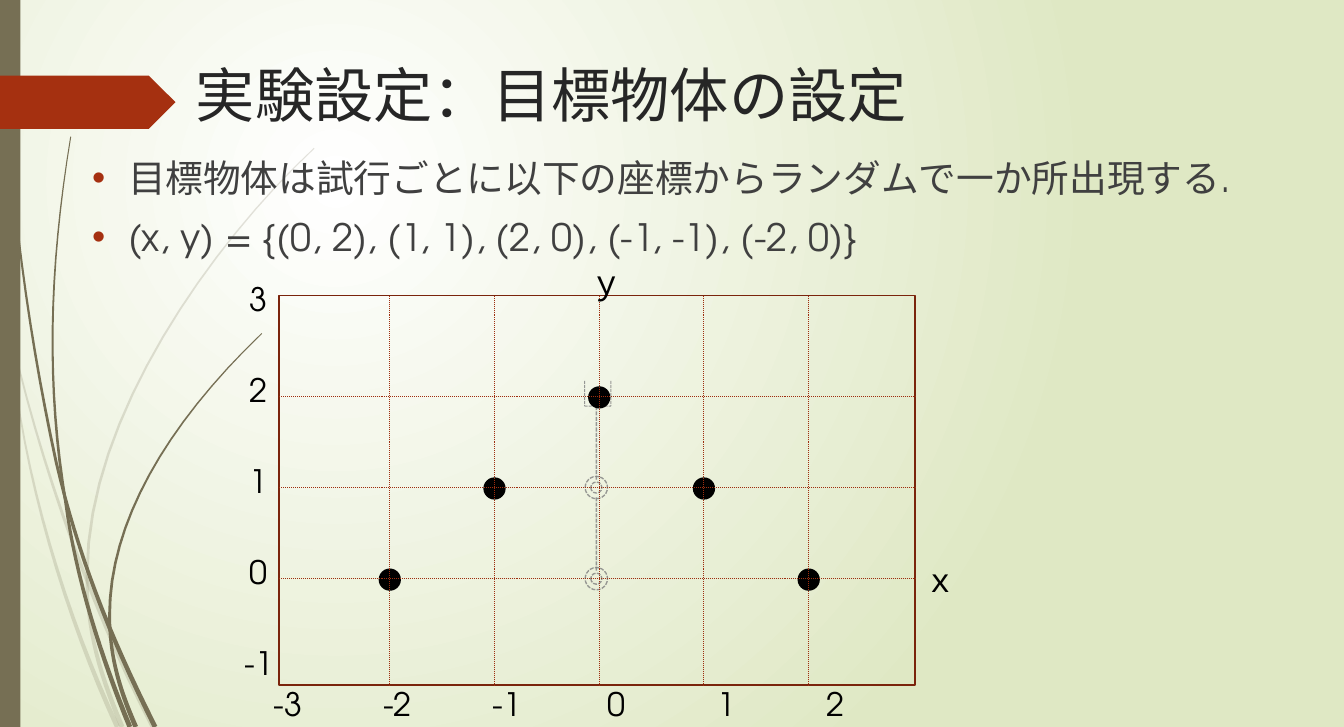
from dataclasses import dataclass
from math import hypot

from lxml import etree
from pptx import Presentation
from pptx.dml.color import RGBColor
from pptx.enum.dml import MSO_LINE
from pptx.enum.shapes import MSO_CONNECTOR, MSO_SHAPE
from pptx.enum.text import MSO_ANCHOR, PP_ALIGN
from pptx.oxml.ns import qn
from pptx.util import Inches, Pt

RECT, ELLIPSE = MSO_SHAPE.RECTANGLE, MSO_SHAPE.OVAL
DONUT, PENTAGON = MSO_SHAPE.DONUT, MSO_SHAPE.PENTAGON
STRAIGHT = MSO_CONNECTOR.STRAIGHT
DOTTED, DASHED = MSO_LINE.ROUND_DOT, MSO_LINE.SQUARE_DOT
LEFT, CENTER = PP_ALIGN.LEFT, PP_ALIGN.CENTER
TOP, MIDDLE = MSO_ANCHOR.TOP, MSO_ANCHOR.MIDDLE


@dataclass(frozen=True)
class Theme:
    font: str = "TeX Gyre Adventor"
    title_size: int = 44
    body_size: int = 28
    label_size: int = 24
    title: str = "262626"
    body: str = "404040"
    ink: str = "000000"
    accent: str = "A53010"
    frame: str = "7A240C"
    grid: str = "9E2E0F"
    ghost: str = "808080"
    wisp: str = "766F54"
    glow: str = "FFFFFF"
    backdrop: str = "DFE8C4"


# Centre line of each wisp: a start point, then cubic curves of three points.
PALE_WISPS = [
    [(0, 2.9), (.3, 4.5), (.9, 6.2), (1.58, 7.5)],
    [(.11, 3.5), (.22, 4.9), (.7, 6.4), (1.21, 7.5)],
    [(3.24, 1.53), (2.2, 2.5), (.9, 4.3), (.9, 5.9), (.88, 6.5), (1.05, 7), (1.26, 7.5)],
]
DARK_WISPS = [
    [(.04, 0), (.04, 1.6), (.26, 3.3), (.58, 4.77), (.8, 5.7), (1.1, 6.5), (1.6, 7.5)],
    [(.73, 1.41), (.5, 2.8), (.48, 4), (.68, 5.2), (.78, 5.95), (1.05, 6.8), (1.34, 7.5)],
    [(2.7, 3.44), (1.7, 4.4), (1.13, 5.4), (1.13, 6.35), (1.13, 6.8), (1.25, 7.15), (1.4, 7.5)],
]


def sample_curves(nodes, steps=16):
    """List points along a chain of cubic curves."""
    points = nodes[:1]
    for i in range(0, len(nodes) - 1, 3):
        for t in (step / steps for step in range(1, steps + 1)):
            weights = ((1 - t) ** 3, 3 * t * (1 - t) ** 2, 3 * t * t * (1 - t), t ** 3)
            points.append(tuple(sum(w * node[axis] for w, node in zip(weights, nodes[i:i + 4]))
                                for axis in (0, 1)))
    return points


def tapered_outline(points, thin=.01, thick=.05):
    """Give the centre line a width that grows from its start to its end."""
    one_side, other_side = [], []
    last = len(points) - 1
    for i, (x, y) in enumerate(points):
        (x1, y1), (x2, y2) = points[max(i - 1, 0)], points[min(i + 1, last)]
        half = (thin + (thick - thin) * i / last) / 2 / hypot(x2 - x1, y2 - y1)
        dx, dy = (y1 - y2) * half, (x2 - x1) * half
        one_side.append((Inches(x + dx), Inches(y + dy)))
        other_side.append((Inches(x - dx), Inches(y - dy)))
    return one_side + other_side[::-1]


def paint(fill, color, opacity=100):
    fill.solid()
    fill.fore_color.rgb = RGBColor.from_string(color)
    if opacity < 100:
        for rgb in list(fill._xPr.iter(qn("a:srgbClr"))):
            etree.SubElement(rgb, qn("a:alpha"), val=str(opacity * 1000))


def write(paragraph, text, *, font, size, color, align=LEFT, before=0):
    run = paragraph.add_run()
    run.text = text
    run.font.name, run.font.size = font, Pt(size)
    run.font.color.rgb = RGBColor.from_string(color)
    paragraph.alignment, paragraph.space_before = align, Pt(before)


class SlideBuilder:
    def __init__(self, slide, theme):
        self.slide, self.theme, self.shapes = slide, theme, slide.shapes

    def background(self):
        fill = self.slide.background.fill
        fill.gradient()
        for stop, color, position in zip(fill.gradient_stops, (self.theme.glow, self.theme.backdrop), (0, 1)):
            stop.color.rgb, stop.position = RGBColor.from_string(color), position
        linear = next(self.slide._element.iter(qn("a:lin")))
        radial = etree.Element(qn("a:path"), path="circle")
        etree.SubElement(radial, qn("a:fillToRect"), l="50000", t="50000", r="100000", b="100000")
        linear.getparent().replace(linear, radial)

    def wisp(self, nodes, opacity):
        start, *corners = tapered_outline(sample_curves(nodes))
        builder = self.shapes.build_freeform(*start)
        builder.add_line_segments(corners, close=True)
        shape = builder.convert_to_shape()
        shape.shadow.inherit = False
        paint(shape.fill, self.theme.wisp, opacity)
        shape.line.fill.background()

    def stroke(self, line, color, weight, dash=None, opacity=100):
        paint(line.fill, color, opacity)
        line.width = Pt(weight)
        if dash:
            line.dash_style = dash

    def shape(self, kind, left, top, width, height, fill=None, **stroke):
        shape = self.shapes.add_shape(kind, *map(Inches, (left, top, width, height)))
        shape.shadow.inherit = False
        if fill:
            paint(shape.fill, fill)
        else:
            shape.fill.background()
        if stroke:
            self.stroke(shape.line, **stroke)
        else:
            shape.line.fill.background()

    def disc(self, kind, x, y, size=.23, **style):
        self.shape(kind, x - size / 2, y - size / 2, size, size, **style)

    def line(self, x1, y1, x2, y2, **stroke):
        connector = self.shapes.add_connector(STRAIGHT, *map(Inches, (x1, y1, x2, y2)))
        self.stroke(connector.line, **stroke)
        etree.SubElement(connector._element.spPr, qn("a:effectLst"))

    def label(self, text, x, y, width=.5, height=.43):
        box = self.shapes.add_textbox(*map(Inches, (x - width / 2, y - height / 2, width, height)))
        frame = box.text_frame
        frame.margin_left = frame.margin_right = frame.margin_top = frame.margin_bottom = 0
        frame.vertical_anchor, frame.word_wrap = MIDDLE, True
        write(frame.paragraphs[0], text, font=self.theme.font, size=self.theme.label_size,
              color=self.theme.ink, align=CENTER)

    def placeholder(self, index, box, anchor):
        """Place a placeholder in front of everything drawn so far."""
        holder = self.slide.placeholders[index]
        holder.left, holder.top, holder.width, holder.height = map(Inches, box)
        holder.text_frame.vertical_anchor, holder.text_frame.word_wrap = anchor, True
        self.shapes._spTree.append(holder._element)
        return holder.text_frame

    def title(self, text):
        frame = self.placeholder(0, (1.92, .59, 11.16, .75), MIDDLE)
        write(frame.paragraphs[0], text, font=self.theme.font, size=self.theme.title_size, color=self.theme.title)

    def bullets(self, items):
        frame = self.placeholder(1, (.85, 1.55, 12.23, 5.08), TOP)
        for i, item in enumerate(items):
            paragraph = frame.add_paragraph() if i else frame.paragraphs[0]
            write(paragraph, item, font=self.theme.font, size=self.theme.body_size,
                  color=self.theme.body, before=10)
            props = paragraph._p.get_or_add_pPr()
            props.set("marL", str(Inches(.37)))
            props.set("indent", str(-Inches(.37)))
            bullet_color = etree.SubElement(props, qn("a:buClr"))
            etree.SubElement(bullet_color, qn("a:srgbClr"), val=self.theme.accent)
            etree.SubElement(props, qn("a:buFont"), typeface="Arial")
            etree.SubElement(props, qn("a:buChar"), char="•")


def draw_decor(page):
    page.background()
    for wisps, opacity in ((PALE_WISPS, 20), (DARK_WISPS, 100)):
        for nodes in wisps:
            page.wisp(nodes, opacity)
    page.shape(RECT, 0, 0, .21, 7.5, fill=page.theme.wisp)
    page.shape(PENTAGON, 0, .78, 1.81, .55, fill=page.theme.accent)


def draw_plot(page):
    theme = page.theme
    left, top, width, height = 2.88, 3.05, 6.56, 4.02
    right, bottom = left + width, top + height
    origin_x, origin_y, step_x, step_y = 6.18, 5.97, 1.08, .94

    ghost = dict(color=theme.ghost, dash=DASHED, opacity=80)
    arm_x, arm_length, cup_top, cup_bottom = 6.15, .77, 3.93, 4.19
    for i in range(2):
        joint_y = origin_y - i * step_y
        page.disc(DONUT, arm_x, joint_y, weight=1, **ghost)
        arm_y = cup_bottom + i * step_y
        page.line(arm_x, arm_y, arm_x, arm_y + arm_length, weight=1, **ghost)
    cup_left, cup_right = 6.03, 6.3
    for x1, y1, x2 in ((cup_left, cup_top, cup_left), (cup_right, cup_top, cup_right),
                       (cup_left, cup_bottom, cup_right)):
        page.line(x1, y1, x2, cup_bottom, weight=.75, **ghost)

    for x, y in ((1, 1), (0, 2), (-1, 1), (-2, 0), (2, 0)):
        page.disc(ELLIPSE, origin_x + x * step_x, origin_y + .01 - y * step_y, fill=theme.ink)

    page.shape(RECT, left, top, width, height, color=theme.frame, weight=1.25)
    grid = dict(color=theme.grid, weight=.75, dash=DOTTED)
    for column in range(-2, 3):
        x = origin_x + column * step_x
        page.line(x, top, x, bottom, **grid)
    for row in range(3):
        y = origin_y - row * step_y
        page.line(left, y, right, y, **grid)

    for tick in range(-3, 3):
        page.label(str(tick), 6.36 + 1.13 * tick, 7.26)
    for tick in range(-1, 4):
        page.label(str(tick), 2.67, 5.9 - step_y * tick)
    page.label("ｙ", 6.26, 2.9)
    page.label("ｘ", 9.7, 5.98)


def main():
    deck = Presentation()
    deck.slide_width, deck.slide_height = Inches(13.86), Inches(7.5)
    page = SlideBuilder(deck.slides.add_slide(deck.slide_layouts[1]), Theme())
    draw_decor(page)
    page.title("実験設定：目標物体の設定")
    page.bullets(["目標物体は試行ごとに以下の座標からランダムで一か所出現する.",
                  "(x, y) = {(0, 2), (1, 1), (2, 0), (-1, -1), (-2, 0)}"])
    draw_plot(page)
    deck.save("out.pptx")


if __name__ == "__main__":
    main()
